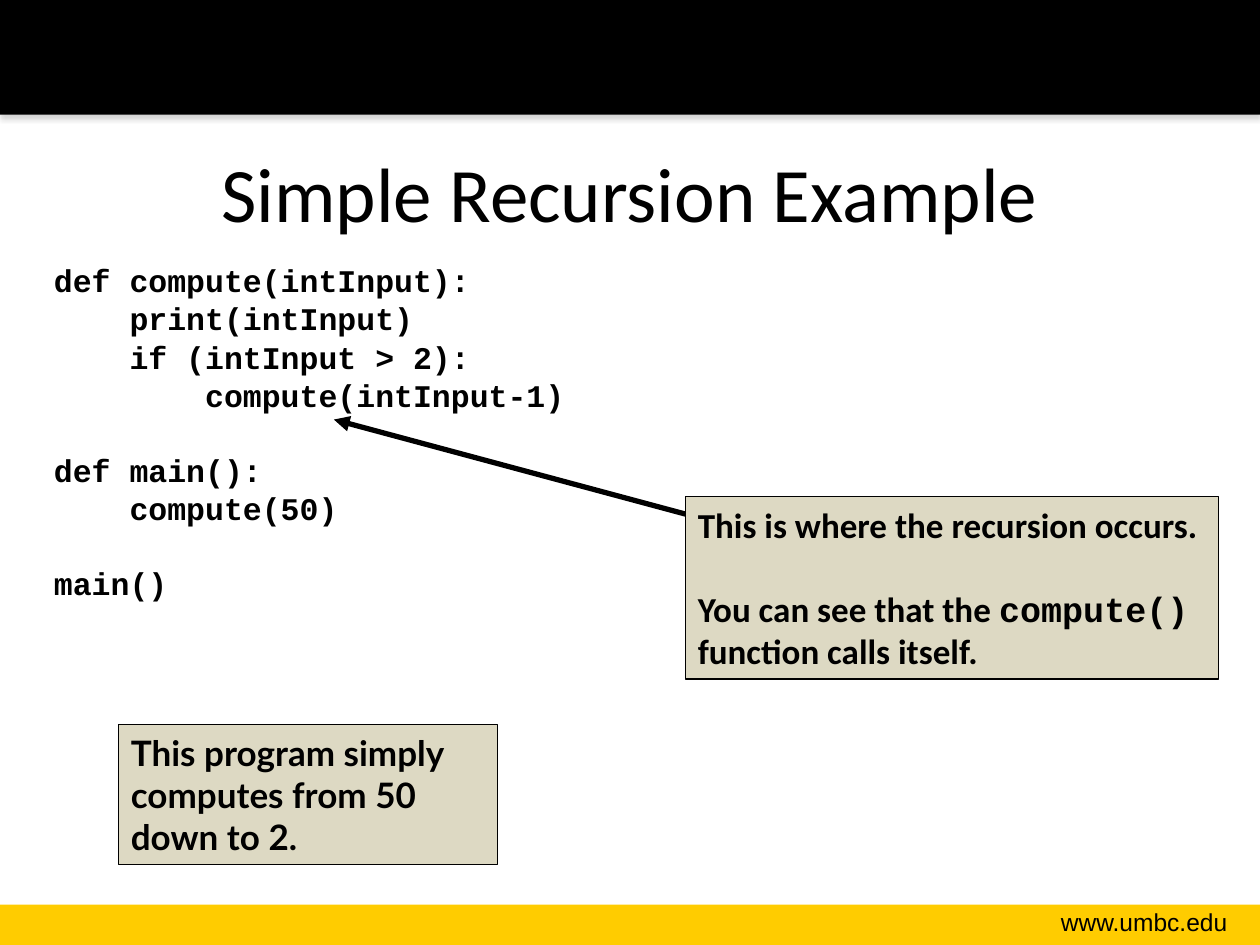
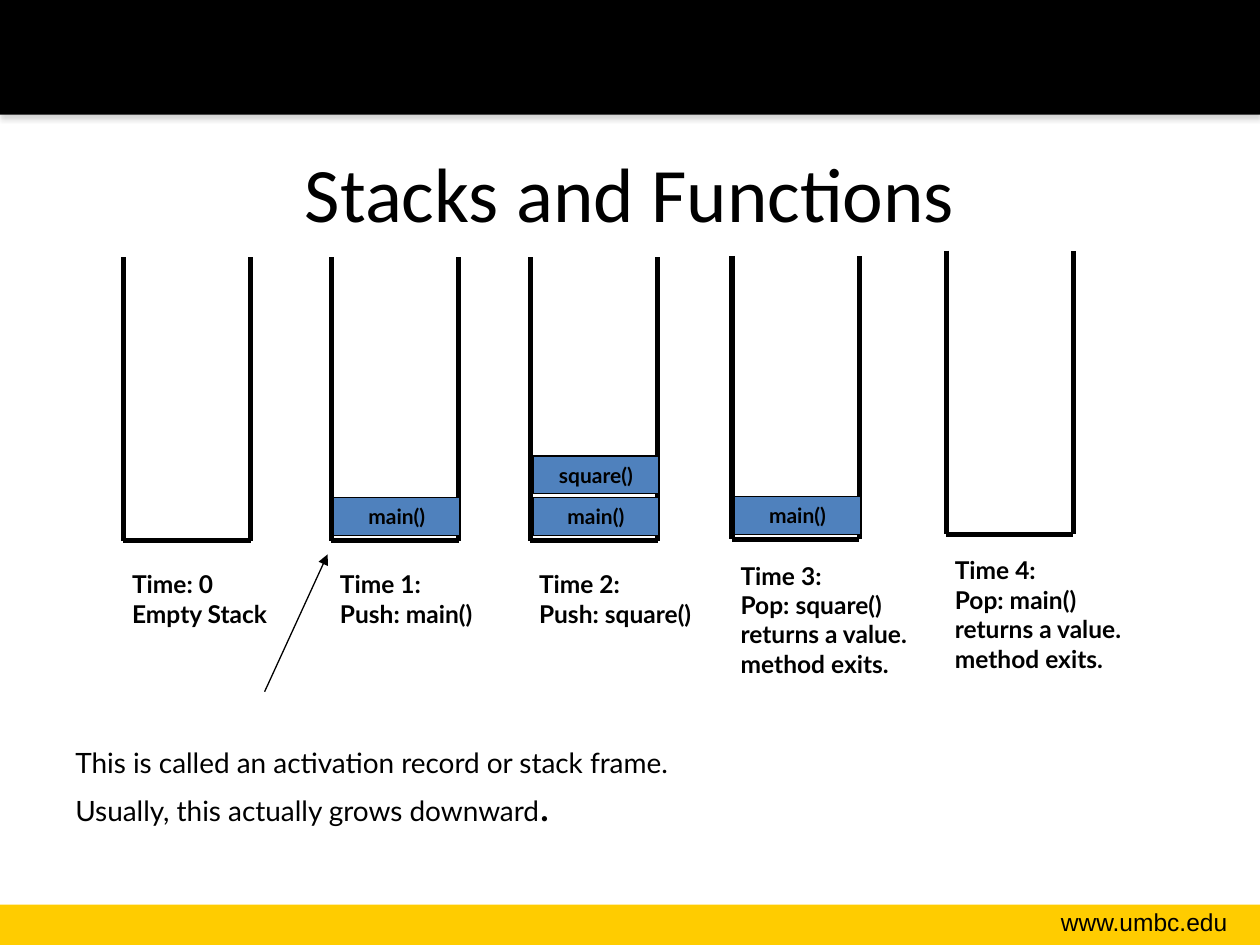
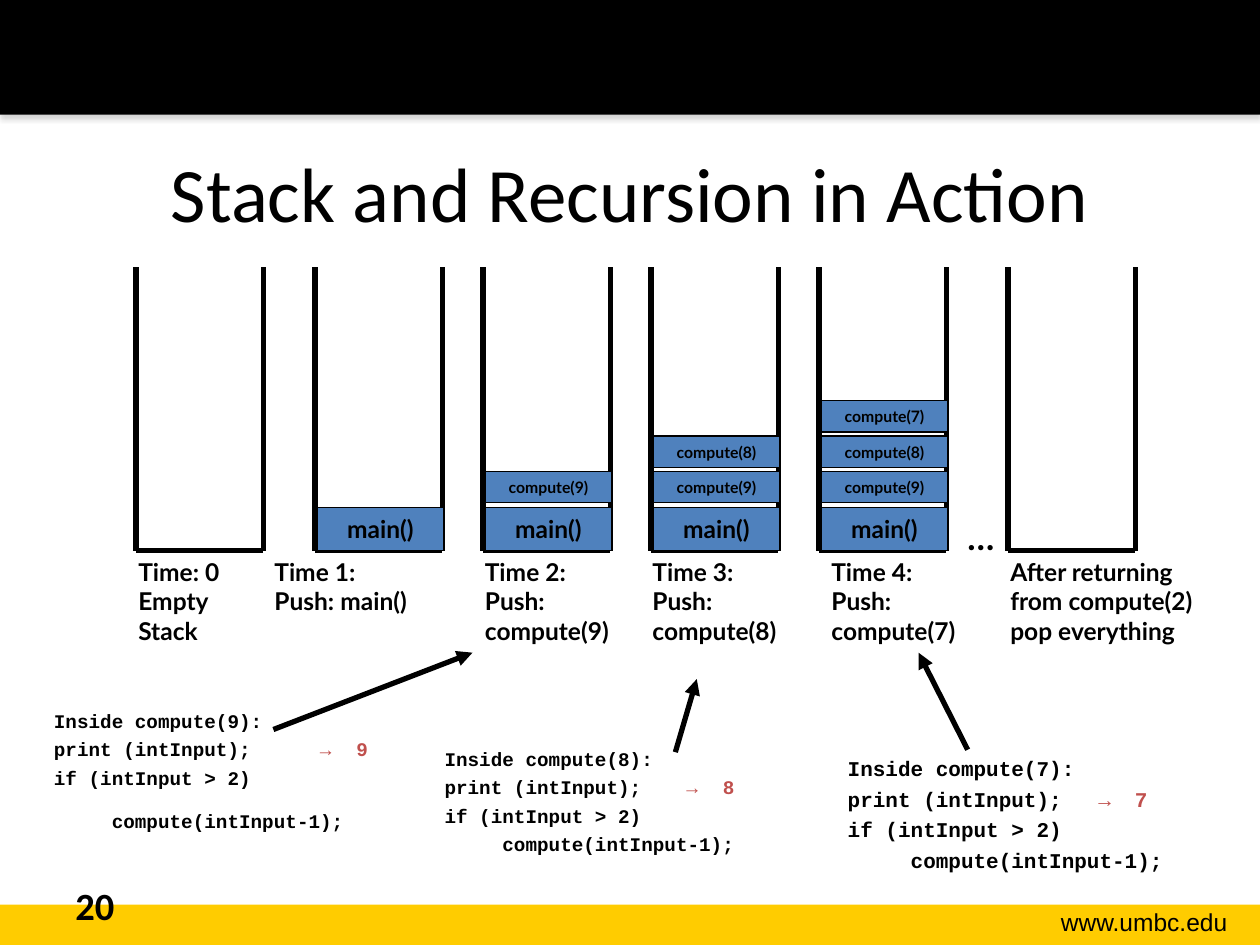
from dataclasses import dataclass

from lxml import etree
from pptx import Presentation
from pptx import util as u
from pptx.dml.color import RGBColor
from pptx.enum import shapes, text
from pptx.oxml import ns


@dataclass(frozen=True)
class Theme:
    # colours
    ink: str = "000000"
    gold: str = "FFCC00"
    note: str = "DDD9C3"
    frame: str = "4F81BD"
    output: str = "C0504D"
    shade: str = "808080"
    # fonts
    head: str = "Calibri"
    body: str = "Lato"
    code: str = "Courier New"
    footer: str = "Arial"
    # type sizes
    title: int = 44
    number: int = 22
    callout: int = 20
    listing: int = 18
    remark: int = 16
    label: int = 14
    call: int = 12
    small_trace: int = 11
    small_call: int = 9
    # line widths
    thick: float = 3
    thin: float = 0.75


THEME = Theme()
COLUMNS, ROWS = 10, 7.5  # one grid cell is one inch square
WALL = 2.25              # height of a stack's walls, in rows
LEFT, CENTER, RIGHT = (text.PP_ALIGN.LEFT, text.PP_ALIGN.CENTER,
                       text.PP_ALIGN.RIGHT)
TOP, MIDDLE = text.MSO_ANCHOR.TOP, text.MSO_ANCHOR.MIDDLE


def cells(*values):
    return [u.Inches(value) for value in values]


def rgb(colour):
    return RGBColor.from_string(colour)


def add_xml(parent, tag, **attributes):
    return etree.SubElement(parent, ns.qn(tag), attributes)


# ---- Text ----

def style(size, name=THEME.body, bold=True, colour=THEME.ink):
    return {"size": size, "name": name, "bold": bold, "colour": colour}


def write(holder, lines, look, align=LEFT, anchor=TOP, leading=None,
          before=0, gaps=None, tabs=()):
    """Fill a text frame; a line is a string or a list of (words, changes)."""
    frame = holder.text_frame
    for key, value in {"word_wrap": True, "vertical_anchor": anchor}.items():
        setattr(frame, key, value)
    for index, line in enumerate(lines):
        paragraph = frame.paragraphs[0] if index == 0 else frame.add_paragraph()
        if tabs:
            stops = add_xml(paragraph._p.get_or_add_pPr(), "a:tabLst")
            for stop in tabs:
                add_xml(stops, "a:tab", pos=str(u.Inches(stop)), algn="l")
        space = (gaps or {}).get(index, before) if index else 0
        layout = {"alignment": align, "line_spacing": leading,
                  "space_before": u.Pt(space)}
        for key, value in layout.items():
            setattr(paragraph, key, value)
        for words, changes in [(line, {})] if isinstance(line, str) else line:
            run = paragraph.add_run()
            run.text = words
            final = {**look, **changes}
            run.font.color.rgb = rgb(final.pop("colour"))
            final["size"] = u.Pt(final["size"])
            for key, value in final.items():
                setattr(run.font, key, value)


def add_text(slide, area, lines, look, **layout):
    write(slide.shapes.add_textbox(*cells(*area)), lines, look, **layout)


# ---- Shapes and lines ----

def add_box(slide, area, fill, outline=None):
    box = slide.shapes.add_shape(shapes.MSO_SHAPE.RECTANGLE, *cells(*area))
    box.shadow.inherit = False
    box.fill.solid()
    box.fill.fore_color.rgb = rgb(fill)
    if outline:
        box.line.color.rgb = rgb(outline)
        box.line.width = u.Pt(THEME.thin)
    else:
        box.line.fill.background()
    return box


def add_line(slide, start, end, width=THEME.thick, arrow=False):
    line = slide.shapes.add_connector(shapes.MSO_CONNECTOR.STRAIGHT,
                                      *cells(*start, *end))
    line.line.color.rgb = rgb(THEME.ink)
    line.line.width = u.Pt(width)
    properties = line._element.spPr
    if arrow:
        add_xml(properties.find(ns.qn("a:ln")), "a:tailEnd", type="triangle")
    add_xml(properties, "a:effectLst")


def add_note(slide, area, lines, look, **layout):
    write(add_box(slide, area, THEME.note, THEME.ink), lines, look,
          anchor=MIDDLE, **layout)


# ---- Stacks ----

def add_stack(slide, left, floor, calls=(), width=1.01):
    """Draw an open bin; calls hold (name, rise above floor, height, size)."""
    right, top = left + width, floor - WALL
    corners = [(left, top), (left, floor), (right, floor), (right, top)]
    for start, end in zip(corners, corners[1:]):
        add_line(slide, start, end)
    for name, rise, height, size in calls:
        frame = add_box(slide, (left + 0.02, floor - rise, 1, height),
                        THEME.frame, THEME.ink)
        write(frame, [name], style(size), align=CENTER, anchor=MIDDLE)


def add_trace(slide, left, top, value, size, stop, last_gap=3):
    """Show the code that runs inside one call, and what it prints."""
    lines = [f"Inside compute({value}):",
             [("print (intInput);", {}),
              (f"\t→\t{value}", {"colour": THEME.output})],
             "if (intInput > 2)",
             "     compute(intInput-1);"]
    add_text(slide, (left, top, 2.83, 1.05), lines, style(size, THEME.code),
             before=3, gaps={3: last_gap}, tabs=(stop, stop + 0.29))


# ---- Slides ----

def add_slide(deck, title):
    slide = deck.slides.add_slide(deck.slide_layouts[6])
    add_box(slide, (0, 7.18, COLUMNS, 0.32), THEME.gold)
    band = add_box(slide, (0, 0, COLUMNS, 0.91), THEME.ink)
    effects = band._element.spPr.find(ns.qn("a:effectLst"))
    shadow = add_xml(effects, "a:outerShdw", blurRad=str(u.Pt(3.1)),
                     dist=str(u.Pt(1.8)), dir="5400000", rotWithShape="0")
    shade = add_xml(shadow, "a:srgbClr", val=THEME.shade)
    add_xml(shade, "a:alpha", val="35000")
    add_text(slide, (7.85, 7.15, 1.99, 0.34), ["www.umbc.edu"],
             style(THEME.label, THEME.footer, False), align=RIGHT)
    add_text(slide, (0.5, 0.9, 9, 1.25), [title],
             style(THEME.title, THEME.head, False), align=CENTER, anchor=MIDDLE)
    return slide


def build_example(deck):
    slide = add_slide(deck, "Simple Recursion Example")
    program = ["def compute(intInput):",
               "    print(intInput)",
               "    if (intInput > 2):",
               "        compute(intInput-1)",
               "def main():",
               "    compute(50)",
               "main()"]
    add_text(slide, (0.33, 2.08, 8.5, 4.08), program,
             style(THEME.listing, THEME.code), leading=0.8, before=4.6,
             gaps={4: 25.5, 6: 25.5})
    add_line(slide, (5.44, 4.08), (2.65, 3.33), arrow=True)
    add_note(slide, (0.94, 5.75, 3.01, 1.11),
             ["This program simply computes from 50 down to 2."],
             style(THEME.callout))
    add_note(slide, (5.44, 3.94, 4.23, 1.45),
             ["This is where the recursion occurs.",
              [("You can see that the ", {}),
               ("compute() ", {"name": THEME.code}),
               ("function calls itself.", {})]],
             style(THEME.callout, THEME.head), gaps={1: 24})


def build_functions(deck):
    slide = add_slide(deck, "Stacks and Functions")
    main_call = ("main()", 0.34, 0.3, THEME.call)
    square_call = ("square()", 0.67, 0.3, THEME.call)
    exits = ["returns a value.", "method exits."]
    # left, floor, label top, calls, label
    moments = [
        (0.98, 4.29, 4.47, [], ["Time: 0", "Empty Stack"]),
        (2.63, 4.29, 4.47, [main_call], ["Time 1:", "Push: main()"]),
        (4.21, 4.29, 4.47, [main_call, square_call],
         ["Time 2:", "Push: square()"]),
        (5.81, 4.28, 4.4, [main_call], ["Time 3:", "Pop: square()", *exits]),
        (7.51, 4.24, 4.36, [], ["Time 4:", "Pop: main()", *exits]),
    ]
    for left, floor, label_top, calls, label in moments:
        add_stack(slide, left, floor, calls)
        add_text(slide, (left - 0.03, label_top, 1.63, 0.24 * len(label) + 0.2),
                 label, style(THEME.label))
    add_text(slide, (0.5, 5.87, 5, 1.04),
             ["This is called an activation record or stack frame.",
              [("Usually, this actually grows downward", {}),
               (".", {"size": 24})]],
             style(THEME.remark, bold=False))
    add_line(slide, (2.1, 5.49), (2.6, 4.4), THEME.thin, arrow=True)


def build_recursion(deck):
    slide = add_slide(deck, "Stack and Recursion in Action")
    floor = 4.37
    add_text(slide, (0.5, 6.95, 2.33, 0.4), ["20"],
             style(THEME.number, THEME.head))

    # Calls pile up one by one, then all are popped
    pile = [("main()", 0.34, 0.34, THEME.label)]
    pile += [(f"compute({9 - level})", 0.63 + 0.28 * level, 0.25,
              THEME.small_call) for level in range(3)]
    lefts = [1.08] + [2.5 + 4 / 3 * step for step in range(4)] + [8]
    depths = [0, 1, 2, 3, 4, 0]
    for left, depth in zip(lefts, depths):
        add_stack(slide, left, floor, pile[:depth])

    # left, width, label
    labels = [(1, 1.17, ["Time: 0", "Empty Stack"]),
              (2.08, 1.43, ["Time 1:", "Push: main()"])]
    labels += [(left, 1.42, [f"Time {time}:", f"Push: compute({11 - time})"])
               for time, left in enumerate((3.75, 5.08, 6.5), start=2)]
    labels.append((7.92, 1.89, ["After returning", "from compute(2)",
                                "pop everything"]))
    for left, width, label in labels:
        add_text(slide, (left, floor, width, 0.81), label, style(THEME.label))
    add_text(slide, (7.58, 4.04, 0.48, 0.43), ["…"], style(THEME.callout))

    # What each call runs
    add_trace(slide, 0.33, 5.58, 9, THEME.small_trace, 2.11, last_gap=11.5)
    add_trace(slide, 3.43, 5.88, 8, THEME.small_trace, 1.92)
    add_trace(slide, 6.63, 5.95, 7, THEME.call, 1.99)
    for start, end in [((2.17, 5.79), (3.75, 5.18)),
                       ((5.36, 5.97), (5.53, 5.39)),
                       ((7.68, 5.95), (7.29, 5.18))]:
        add_line(slide, start, end, arrow=True)


def main():
    deck = Presentation()
    deck.slide_width, deck.slide_height = cells(COLUMNS, ROWS)
    for build in (build_example, build_functions, build_recursion):
        build(deck)
    deck.save("out.pptx")


if __name__ == "__main__":
    main()
